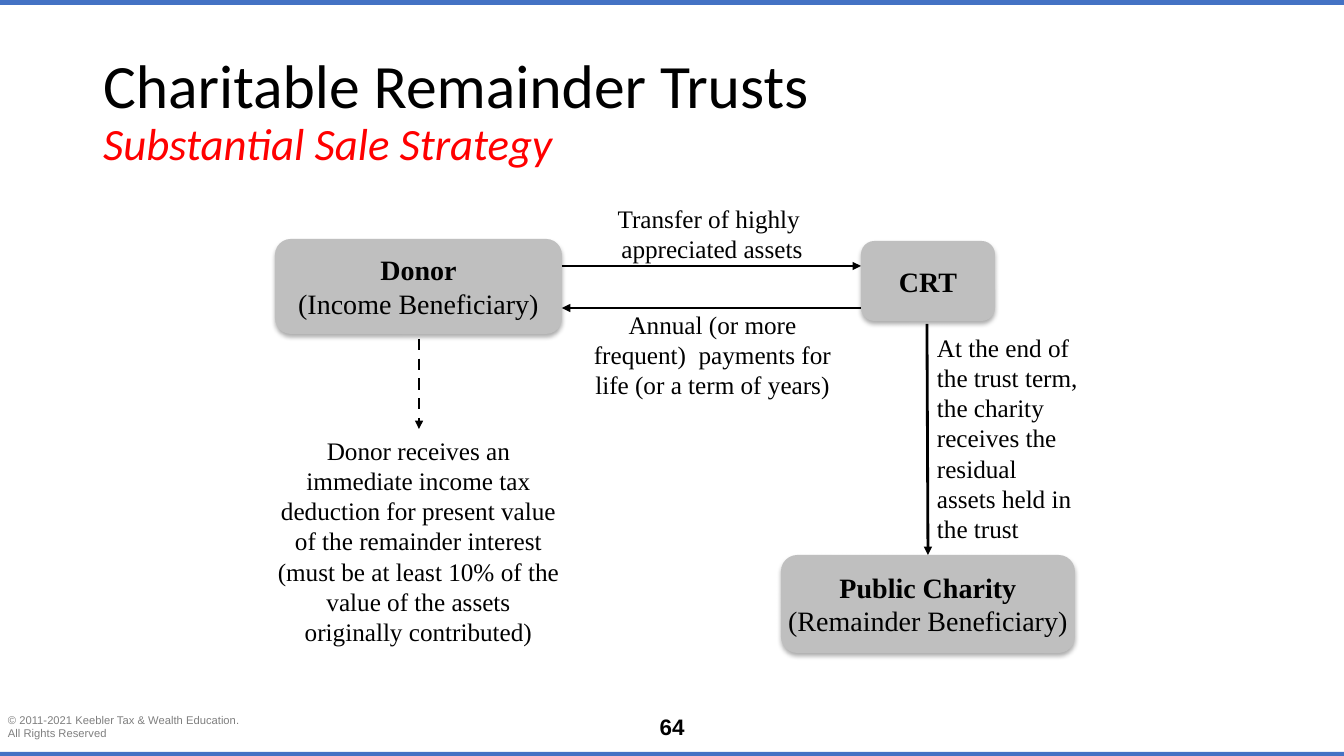
"""Build the Charitable Remainder Trusts slide: a flow between donor, trust and charity."""
import pptx
import pptx.dml.color
import pptx.enum.dml
import pptx.enum.shapes
import pptx.enum.text
import pptx.oxml
import pptx.oxml.ns
import pptx.util
from lxml import etree

PX = 914400 / 100.8
SLIDE_SIZE = (1344, 756)
COLORS = {"black": "000000", "red": "FF0000", "gray": "7F7F7F", "node": "BFBFBF", "bar": "4472C4"}
ALIGN = pptx.enum.text.PP_ALIGN
ANCHOR = pptx.enum.text.MSO_ANCHOR
SHAPE = pptx.enum.shapes.MSO_SHAPE
SERIF = "Times New Roman"
SANS = "Arial"
FLOW_INSETS = (11, 6)
FOOTER_INSETS = (10, 5)

TITLE_AREA = (93, 40, 1159, 146)
TITLE = [("Charitable Remainder Trusts", 44, "black", False),
         ("Substantial Sale Strategy", 32, "red", True)]
BARS = [(0, 0, 1344, 5), (0, 752, 1344, 5)]
NODES = [
    ((275, 239, 287, 95), ["Donor", "(Income Beneficiary)"], True),
    ((781, 555, 294, 98), ["Public Charity", "(Remainder Beneficiary)"], False),
    ((861, 241, 134, 80), ["CRT"], True),
]
LABELS = [
    ((570, 197, 284, 53), ["Transfer of highly ", "appreciated assets"], ALIGN.CENTER),
    ((264, 429, 309, 224), ["Donor receives an immediate income tax deduction for present value "
                            "of the remainder interest (must be at least 10% of the value of "
                            "the assets originally contributed)"], ALIGN.CENTER),
    ((926, 326, 165, 139), ["At the end of the trust term, the charity receives the residual "
                            "assets held in the trust"], ALIGN.LEFT),
    ((577, 303, 271, 50), ["Annual (or more frequent)  payments for life (or a term of years)"],
     ALIGN.CENTER),
]
ARROWS = [
    ((419, 339), (419, 429), True),
    ((562, 266), (861, 266), False),
    ((861, 308), (562, 308), False),
    ((927, 324), (928, 555), False),
]
COPYRIGHT = ["© 2011-2021 Keebler Tax & Wealth Education.", "All Rights Reserved"]
COPYRIGHT_AREA = (-2, 708, 257, 37)
NUMBER_AREA = (634, 708, 76, 37)


def emu(lengths):
    return [round(length * PX) for length in lengths]


def rgb(name):
    return pptx.dml.color.RGBColor.from_string(COLORS[name])


def add_span(para, text, size, color, font, bold=False, italic=False):
    span = para.add_run()
    span.text = text
    span.font.size = pptx.util.Pt(size)
    span.font.name = font
    span.font.bold = bold
    span.font.italic = italic
    span.font.color.rgb = rgb(color)


def fill_text(box, lines, size, insets, align=ALIGN.CENTER, anchor=ANCHOR.TOP,
              color="black", font=SERIF, bold_first=False, wrap=True):
    frame = box.text_frame
    frame.word_wrap = wrap
    frame.vertical_anchor = anchor
    side, edge = emu(insets)
    frame.margin_left = frame.margin_right = side
    frame.margin_top = frame.margin_bottom = edge
    for index, line in enumerate(lines):
        para = frame.add_paragraph() if index else frame.paragraphs[0]
        para.alignment = align
        add_span(para, line, size, color, font, bold=bold_first and index == 0)


def add_block(page, kind, area, color):
    block = page.shapes.add_shape(kind, *emu(area))
    block.shadow.inherit = False
    block.fill.solid()
    block.fill.fore_color.rgb = rgb(color)
    block.line.fill.background()
    return block


def add_soft_shadow(block):
    effects = block.element.spPr.find(pptx.oxml.ns.qn("a:effectLst"))
    effects.append(pptx.oxml.parse_xml(
        f'<a:outerShdw {pptx.oxml.ns.nsdecls("a")} blurRad="44450" dist="27940" '
        'dir="5400000" algn="ctr" rotWithShape="0">'
        f'<a:srgbClr val="{COLORS["black"]}"><a:alpha val="32000"/></a:srgbClr></a:outerShdw>'))


def add_arrow(page, start, end, dashed):
    arrow = page.shapes.add_connector(
        pptx.enum.shapes.MSO_CONNECTOR.STRAIGHT, *emu(start + end))
    arrow.line.width = pptx.util.Pt(2)
    arrow.line.color.rgb = rgb("black")
    if dashed:
        arrow.line.dash_style = pptx.enum.dml.MSO_LINE.DASH
    qn = pptx.oxml.ns.qn
    properties = arrow.element.spPr
    etree.SubElement(properties.find(qn("a:ln")), qn("a:tailEnd"), type="triangle")
    etree.SubElement(properties, qn("a:effectLst"))


def add_title(page):
    title = page.shapes.title
    title.left, title.top, title.width, title.height = emu(TITLE_AREA)
    frame = title.text_frame
    frame.auto_size = pptx.enum.text.MSO_AUTO_SIZE.NONE
    frame.word_wrap = True
    frame.vertical_anchor = ANCHOR.MIDDLE
    para = frame.paragraphs[0]
    para.alignment = ALIGN.LEFT
    para.line_spacing = 0.9
    for index, (text, size, color, italic) in enumerate(TITLE):
        if index:
            para.add_line_break()
        add_span(para, text, size, color, "Calibri", italic=italic)


def main():
    deck = pptx.Presentation()
    deck.slide_width, deck.slide_height = emu(SLIDE_SIZE)
    page = deck.slides.add_slide(deck.slide_layouts[5])
    add_title(page)
    for area in BARS:
        add_block(page, SHAPE.RECTANGLE, area, "bar")
    for area, lines, wrap in NODES:
        node = add_block(page, SHAPE.ROUNDED_RECTANGLE, area, "node")
        add_soft_shadow(node)
        fill_text(node, lines, 20, FLOW_INSETS, anchor=ANCHOR.MIDDLE, bold_first=True, wrap=wrap)
    for start, end, dashed in ARROWS:
        add_arrow(page, start, end, dashed)
    for area, lines, align in LABELS:
        fill_text(page.shapes.add_textbox(*emu(area)), lines, 18, FLOW_INSETS, align)
    fill_text(page.shapes.add_textbox(*emu(COPYRIGHT_AREA)), COPYRIGHT, 8, FOOTER_INSETS,
              ALIGN.LEFT, color="gray", font=SANS, wrap=False)
    fill_text(page.shapes.add_textbox(*emu(NUMBER_AREA)), ["64"], 16, FOOTER_INSETS,
              font=SANS, bold_first=True)
    deck.save("out.pptx")


if __name__ == "__main__":
    main()
